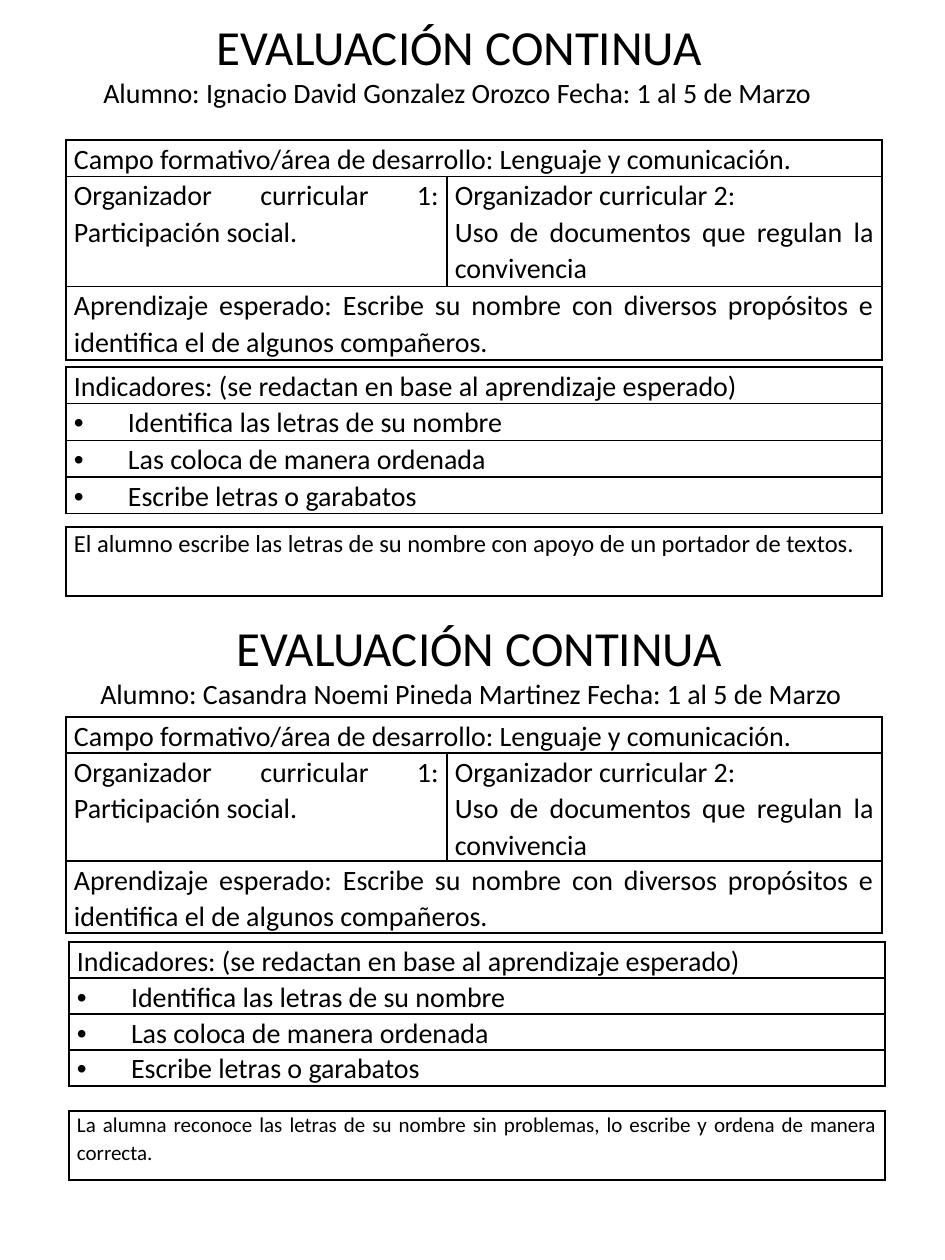
from dataclasses import dataclass

from lxml import etree
from pptx import Presentation
from pptx.dml.color import RGBColor
from pptx.enum.text import MSO_ANCHOR, PP_ALIGN
from pptx.oxml.ns import qn
from pptx.util import Pt

CENTER, LEFT, JUSTIFY = PP_ALIGN.CENTER, PP_ALIGN.LEFT, PP_ALIGN.JUSTIFY
TOP = MSO_ANCHOR.TOP
EMU_PER_PX = 914400 / 126


@dataclass(frozen=True)
class Theme:
    font: str = "Calibri"
    ink: RGBColor = RGBColor(0, 0, 0)
    title: int = 28
    body: int = 16
    border: int = 1
    spacing: float = 1.07


THEME = Theme()
LINE_H = 36
TABLE_W = 816
HEADING_H = 144
NOTE_H = 69
CELL_PAD = 8
BULLET_INDENT = 54

CURRICULUM = [
    ["Campo formativo/área de desarrollo: Lenguaje y comunicación."],
    ["Organizador curricular 1: Participación social.",
     "Organizador curricular 2:\nUso de documentos que regulan la convivencia"],
    ["Aprendizaje esperado: Escribe su nombre con diversos propósitos "
     "e identifica el de algunos compañeros."],
]
INDICATORS = [
    ["Indicadores: (se redactan en base al aprendizaje esperado)"],
    ["•Identifica las letras de su nombre"],
    ["•Las coloca de manera ordenada"],
    ["•Escribe letras o garabatos"],
]
EVALUATIONS = [
    {
        "heading": (91, 10, 736),
        "student": "Alumno: Ignacio David Gonzalez Orozco Fecha: 1 al 5 de Marzo",
        "curriculum": (66, 140),
        "indicators": (66, 367),
        "note": (66, 527),
        "note_text": "El alumno escribe las letras de su nombre con apoyo "
                     "de un portador de textos.",
        "note_size": 14,
    },
    {
        "heading": (88, 611, 782),
        "student": "Alumno: Casandra Noemi Pineda Martinez Fecha: 1 al 5 de Marzo",
        "curriculum": (66, 717),
        "indicators": (69, 942),
        "note": (69, 1111),
        "note_text": "La alumna reconoce las letras de su nombre sin problemas, "
                     "lo escribe y ordena de manera correcta.",
        "note_size": 12,
    },
]


def px(n):
    return round(n * EMU_PER_PX)


def set_all(target, values):
    for name, value in values.items():
        setattr(target, name, value)


def write(p, text, size, align):
    p.alignment = align
    r = p.add_run()
    r.text = text
    set_all(r.font, {"name": THEME.font, "size": Pt(size), "bold": False})
    r.font.color.rgb = THEME.ink


def add_bullet(p):
    pPr = p._p.get_or_add_pPr()
    pPr.set("marL", str(px(BULLET_INDENT)))
    pPr.set("indent", str(-px(BULLET_INDENT)))
    etree.SubElement(pPr, qn("a:buFont"), typeface="Arial")
    etree.SubElement(pPr, qn("a:buChar"), char="•")


def add_borders(cell):
    tcPr = cell._tc.get_or_add_tcPr()
    for side in ("lnL", "lnR", "lnT", "lnB"):
        ln = etree.SubElement(tcPr, qn(f"a:{side}"), w=str(Pt(THEME.border)))
        fill = etree.SubElement(ln, qn("a:solidFill"))
        etree.SubElement(fill, qn("a:srgbClr"), val=str(THEME.ink))


def style_cell(cell):
    add_borders(cell)
    cell.fill.background()
    set_all(cell, {"margin_left": px(CELL_PAD), "margin_right": px(CELL_PAD),
                   "margin_top": 0, "margin_bottom": 0, "vertical_anchor": TOP})


def fill_cell(cell, text, size):
    """Write one paragraph per line; a leading bullet sign makes a list item."""
    tf = cell.text_frame
    for i, line in enumerate(text.split("\n")):
        p = tf.add_paragraph() if i else tf.paragraphs[0]
        write(p, line.removeprefix("•"), size, JUSTIFY)
        p.line_spacing = THEME.spacing
        if line.startswith("•"):
            add_bullet(p)


def add_grid(s, at, rows, heights, widths=(TABLE_W,), size=THEME.body):
    """Add a ruled table; a row with a single text spans every column."""
    x, y = at
    table = s.shapes.add_table(len(rows), len(widths), px(x), px(y),
                               px(sum(widths)), px(sum(heights))).table
    set_all(table, {"first_row": False, "horz_banding": False})
    for column, width in zip(table.columns, widths):
        column.width = px(width)
    for i, (texts, height) in enumerate(zip(rows, heights)):
        table.rows[i].height = px(height)
        for j in range(len(widths)):
            style_cell(table.cell(i, j))
        if len(texts) < len(widths):
            table.cell(i, 0).merge(table.cell(i, len(widths) - 1))
        for j, text in enumerate(texts):
            fill_cell(table.cell(i, j), text, size)


def add_heading(s, at, student):
    x, y, width = at
    tf = s.shapes.add_textbox(px(x), px(y), px(width), px(HEADING_H)).text_frame
    set_all(tf, {"word_wrap": True, "vertical_anchor": TOP})
    write(tf.paragraphs[0], "EVALUACIÓN CONTINUA", THEME.title, CENTER)
    write(tf.add_paragraph(), student, THEME.body, LEFT)


def add_evaluation(s, item):
    add_grid(s, item["curriculum"], CURRICULUM,
             [LINE_H * lines for lines in (1, 3, 2)], (381, 435))
    add_grid(s, item["indicators"], INDICATORS, [LINE_H] * len(INDICATORS))
    add_grid(s, item["note"], [[item["note_text"]]], [NOTE_H], size=item["note_size"])
    add_heading(s, item["heading"], item["student"])


def main():
    prs = Presentation()
    set_all(prs, {"slide_width": px(945), "slide_height": px(1260)})
    s = prs.slides.add_slide(prs.slide_layouts[6])
    for item in EVALUATIONS:
        add_evaluation(s, item)
    prs.save("out.pptx")


if __name__ == "__main__":
    main()
